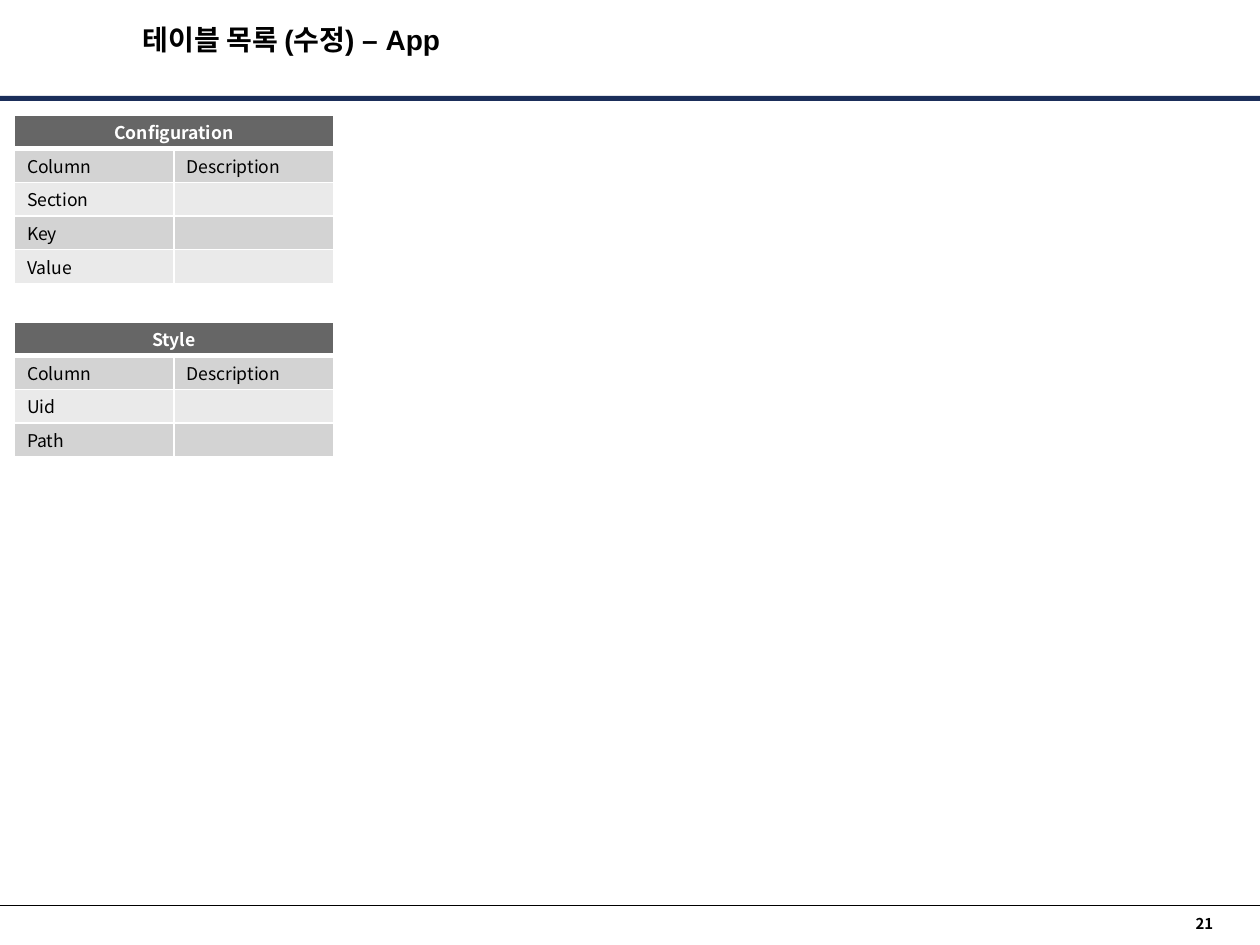
from lxml import etree
from pptx import Presentation
from pptx.dml.color import RGBColor
from pptx.enum import shapes, text
from pptx.oxml import ns
from pptx.util import Pt

TITLE = "테이블 목록 (수정) – App"
PAGE_NUMBER = "21"
TABLES = [
    ("Configuration", ["Section", "Key", "Value"]),
    ("Style", ["Uid", "Path"]),
]
COLUMN_LABELS = ("Column", "Description")

BLACK = RGBColor(0x00, 0x00, 0x00)
WHITE = RGBColor(0xFF, 0xFF, 0xFF)
NAVY = RGBColor(0x1B, 0x2E, 0x5A)
HEADER_GRAY = RGBColor(0x66, 0x66, 0x66)
BANDS = (RGBColor(0xEA, 0xEA, 0xEA), RGBColor(0xD3, 0xD3, 0xD3))

TITLE_FONT = "Arial"
KOREAN_FONT = "Noto Sans CJK KR"
PAGE_WIDTH, PAGE_HEIGHT = 717.84, 538.56
TABLE_LEFT, FIRST_TABLE_TOP = 8.2, 65.5
COLUMN_WIDTH, ROW_HEIGHT, TABLE_GAP = 90.9, 19.2, 22
CELL_MARGIN = 2
FOOTER_TOP = 516.2


def style_text(para, name, size, color, bold, align):
    para.alignment = align
    for span in para.runs:
        font = span.font
        font.name, font.size, font.bold = name, Pt(size), bold
        font.color.rgb = color
        east_asian = etree.SubElement(font._element, ns.qn("a:ea"))
        east_asian.set("typeface", KOREAN_FONT)


def set_borders(cell, top, bottom):
    properties = cell._tc.get_or_add_tcPr()
    widths = (("L", 1), ("R", 1), ("T", top), ("B", bottom))
    for index, (side, width) in enumerate(widths):
        line = etree.Element(ns.qn(f"a:ln{side}"), w=str(Pt(width)))
        fill = etree.SubElement(line, ns.qn("a:solidFill"))
        etree.SubElement(fill, ns.qn("a:srgbClr"), val=str(WHITE))
        properties.insert(index, line)


def fill_cell(cell, label, row):
    header = row == 0
    cell.fill.solid()
    cell.fill.fore_color.rgb = HEADER_GRAY if header else BANDS[row % 2]
    cell.margin_top = cell.margin_bottom = Pt(CELL_MARGIN)
    cell.vertical_anchor = text.MSO_ANCHOR.MIDDLE
    set_borders(cell, 3 if row == 1 else 1, 3 if header else 1)
    para = cell.text_frame.paragraphs[0]
    if label:
        para.text = label
        style_text(para, KOREAN_FONT, 10, WHITE if header else BLACK, header,
                   text.PP_ALIGN.CENTER if header else text.PP_ALIGN.LEFT)
    else:
        ending = etree.SubElement(para._p, ns.qn("a:endParaRPr"), sz="1000")
        for tag in ("a:latin", "a:ea"):
            etree.SubElement(ending, ns.qn(tag), typeface=KOREAN_FONT)


def add_listing(page, name, fields, top):
    rows = [(name, ""), COLUMN_LABELS] + [(field, "") for field in fields]
    height = len(rows) * ROW_HEIGHT
    table = page.shapes.add_table(len(rows), 2, Pt(TABLE_LEFT), Pt(top),
                                  Pt(2 * COLUMN_WIDTH), Pt(height)).table
    for column in table.columns:
        column.width = Pt(COLUMN_WIDTH)
    for row, labels in enumerate(rows):
        table.rows[row].height = Pt(ROW_HEIGHT)
        for column, label in enumerate(labels):
            fill_cell(table.cell(row, column), label, row)
    table.cell(0, 0).merge(table.cell(0, 1))
    return top + height + TABLE_GAP


def add_frame(page):
    bar = page.shapes.add_shape(shapes.MSO_SHAPE.RECTANGLE, 0, Pt(54.7),
                                Pt(PAGE_WIDTH), Pt(2.9))
    bar.shadow.inherit = False
    bar.fill.solid()
    bar.fill.fore_color.rgb = NAVY
    bar.line.fill.background()

    rule = page.shapes.add_connector(shapes.MSO_CONNECTOR.STRAIGHT, 0, Pt(FOOTER_TOP),
                                     Pt(PAGE_WIDTH), Pt(FOOTER_TOP))
    rule.line.color.rgb = BLACK
    rule.line.width = Pt(0.75)
    etree.SubElement(rule._element.spPr, ns.qn("a:effectLst"))

    box = page.shapes.add_textbox(Pt(679.7), Pt(521.3), Pt(11.5), Pt(10.1))
    frame = box.text_frame
    frame.margin_left = frame.margin_right = frame.margin_top = frame.margin_bottom = 0
    frame.word_wrap = False
    frame.text = PAGE_NUMBER
    style_text(frame.paragraphs[0], KOREAN_FONT, 8.5, BLACK, True, text.PP_ALIGN.RIGHT)


def add_title(page):
    title = page.shapes.title
    title.left, title.top, title.width, title.height = map(Pt, (9.4, 9.4, 313.2, 33.8))
    frame = title.text_frame
    frame.text = TITLE
    frame.auto_size = text.MSO_AUTO_SIZE.NONE
    frame.vertical_anchor = text.MSO_ANCHOR.TOP
    style_text(frame.paragraphs[0], TITLE_FONT, 16, BLACK, True, text.PP_ALIGN.CENTER)


def main():
    deck = Presentation()
    deck.slide_width, deck.slide_height = Pt(PAGE_WIDTH), Pt(PAGE_HEIGHT)
    page = deck.slides.add_slide(deck.slide_layouts[5])
    add_frame(page)
    add_title(page)
    top = FIRST_TABLE_TOP
    for name, fields in TABLES:
        top = add_listing(page, name, fields, top)
    deck.save("out.pptx")


if __name__ == "__main__":
    main()
